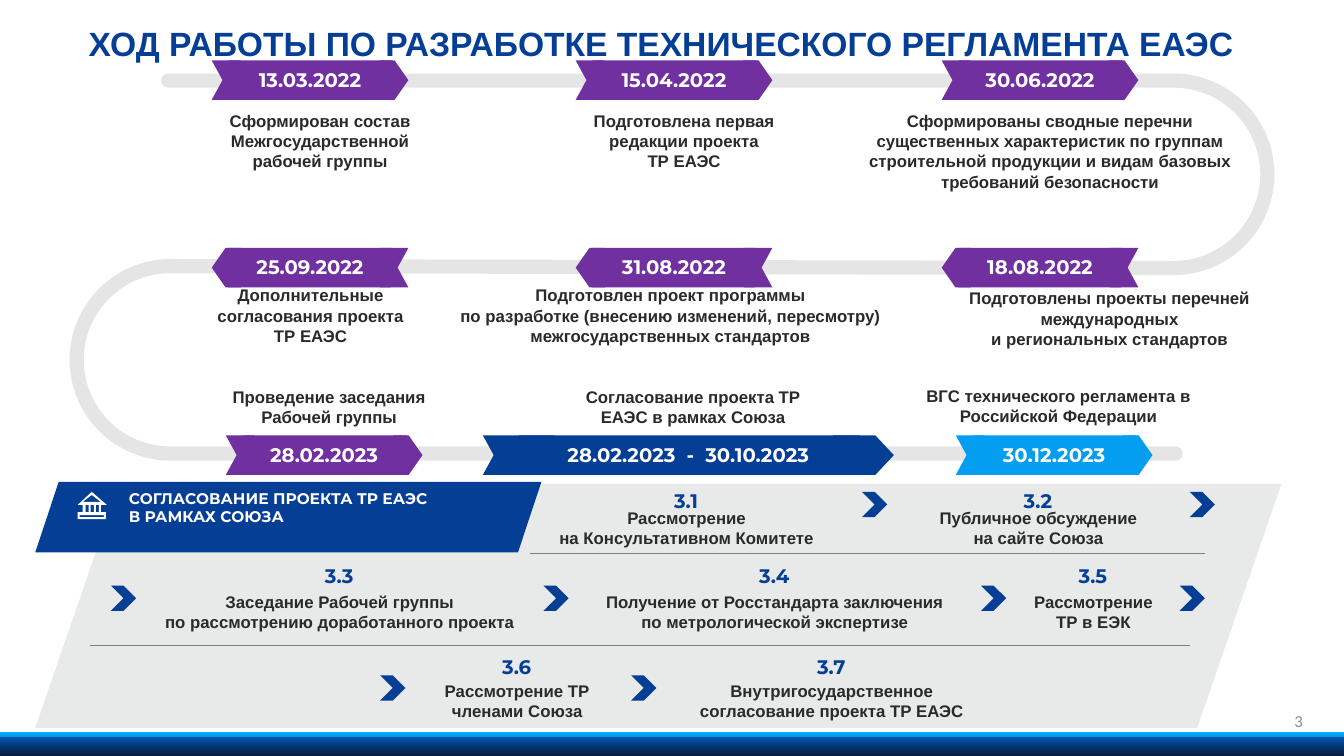
from dataclasses import dataclass
from math import cos, radians, sin

from lxml import etree
from pptx import Presentation
from pptx import util as u
from pptx.dml.color import RGBColor
from pptx.enum import shapes, text
from pptx.oxml.ns import qn

COLORS = {
    "track": "E5E5E5", "purple": "7030A0", "navy": "053E95", "sky": "039EF0",
    "body": "292A2B", "white": "FFFFFF", "panel": "E8E9E9", "rule": "7F7F7F",
    "page": "8C8C8C", "deep": "051A3D", "mid": "0156B0", "bright": "03ACFC",
}
FONTS = {
    "title": {"name": "Arial", "size": u.Pt(24), "bold": True},
    "body": {"name": "Arial", "size": u.Pt(12), "bold": True},
    "label": {"name": "Montserrat", "size": u.Pt(14), "bold": True},
    "heading": {"name": "Montserrat", "size": u.Pt(11), "bold": True},
    "page": {"name": "Calibri", "size": u.Pt(12), "bold": False},
}
LEFT, CENTER, RIGHT = text.PP_ALIGN.LEFT, text.PP_ALIGN.CENTER, text.PP_ALIGN.RIGHT
TOP, MIDDLE = text.MSO_ANCHOR.TOP, text.MSO_ANCHOR.MIDDLE
PRESET = shapes.MSO_SHAPE
BANNER_W, BANNER_H = 1.95, 0.39

Box = tuple[float, float, float, float]
Points = list[tuple[float, float]]


@dataclass
class Milestone:
    date: str
    left: float
    top: float
    note: str
    note_box: Box
    color: str = "purple"
    backward: bool = False
    stretch: float = 1


@dataclass
class Step:
    number: str
    number_top: float
    note: str
    note_box: Box


MILESTONES = [
    Milestone("13.03.2022", 2.1, 0.6, "Сформирован состав Межгосударственной рабочей группы",
              (1.92, 1.05, 2.51, 0.71)),
    Milestone("15.04.2022", 5.71, 0.6, "Подготовлена первая редакции проекта\nТР ЕАЭС",
              (5.53, 1.05, 2.51, 0.71)),
    Milestone("30.06.2022", 9.34, 0.6, "Сформированы сводные перечни\nсущественных характеристик по группам "
              "строительной продукции и видам базовых требований безопасности", (8.26, 1.05, 4.31, 0.91)),
    Milestone("18.08.2022", 9.34, 2.46, "Подготовлены проекты перечней международных\nи региональных стандартов",
              (9.1, 2.81, 3.81, 0.71), backward=True),
    Milestone("31.08.2022", 5.71, 2.46, "Подготовлен проект программы\nпо разработке (внесению изменений, "
              "пересмотру) межгосударственных стандартов", (4.14, 2.78, 5.02, 0.71), backward=True),
    Milestone("25.09.2022", 2.1, 2.46, "Дополнительные согласования проекта\nТР ЕАЭС",
              (1.82, 2.78, 2.52, 0.71), backward=True),
    Milestone("28.02.2023", 2.24, 4.32, "Проведение заседания Рабочей группы", (2.01, 3.79, 2.51, 0.5)),
    Milestone("28.02.2023  -  30.10.2023", 4.79, 4.32, "Согласование проекта ТР ЕАЭС в рамках Союза",
              (5.49, 3.79, 2.77, 0.5), "navy", stretch=2.09),
    Milestone("30.12.2023", 9.48, 4.32, "ВГС технического регламента в Российской Федерации",
              (9.08, 3.78, 2.84, 0.5), "sky"),
]
STEPS = [
    Step("3.1", 4.8, "Рассмотрение\nна Консультативном Комитете", (5.37, 4.99, 2.88, 0.5)),
    Step("3.2", 4.8, "Публичное обсуждение\nна сайте Союза", (9.13, 4.99, 2.34, 0.5)),
    Step("3.3", 5.55, "Заседание Рабочей группы\nпо рассмотрению доработанного проекта", (1.48, 5.82, 3.78, 0.5)),
    Step("3.4", 5.55, "Получение от Росстандарта заключения\nпо метрологической экспертизе",
         (5.77, 5.82, 3.83, 0.5)),
    Step("3.5", 5.55, "Рассмотрение ТР в ЕЭК", (10.11, 5.82, 1.47, 0.5)),
    Step("3.6", 6.45, "Рассмотрение ТР\nчленами Союза", (4.28, 6.7, 1.7, 0.5)),
    Step("3.7", 6.45, "Внутригосударственное согласование проекта ТР ЕАЭС", (6.78, 6.7, 2.94, 0.5)),
]
STEP_ARROWS = {4.88: (8.55, 11.8), 5.81: (1.1, 5.39, 9.73, 11.7), 6.7: (3.77, 6.26)}

prs = Presentation()
prs.slide_width, prs.slide_height = u.Inches(13.33), u.Inches(7.5)
slide = prs.slides.add_slide(prs.slide_layouts[6])


def rgb(color: str) -> RGBColor:
    return RGBColor.from_string(COLORS[color])


def paint(shape, color: str) -> None:
    shape.shadow.inherit = False
    shape.fill.solid()
    shape.fill.fore_color.rgb = rgb(color)
    shape.line.fill.background()


def add_preset(kind, box: Box, color: str, adjust: float | None = None, rotation: float = 0):
    shape = slide.shapes.add_shape(kind, *map(u.Inches, box))
    paint(shape, color)
    if adjust is not None:
        shape.adjustments[0] = adjust
    shape.rotation = rotation
    return shape


def add_text(content: str, box: Box, font: str, color: str, align=CENTER, anchor=TOP) -> None:
    frame = slide.shapes.add_textbox(*map(u.Inches, box)).text_frame
    frame.word_wrap = True
    frame.vertical_anchor = anchor
    frame.text = content
    for paragraph in frame.paragraphs:
        paragraph.alignment = align
        for key, value in FONTS[font].items():
            setattr(paragraph.font, key, value)
        paragraph.font.color.rgb = rgb(color)


def add_outline(contours: list[Points], color: str) -> None:
    # The builder keeps whole numbers only, so points go in as EMU
    first, *others = [[(u.Inches(x), u.Inches(y)) for x, y in contour] for contour in contours]
    builder = slide.shapes.build_freeform(*first[0])
    builder.add_line_segments(first[1:])
    for contour in others:
        builder.move_to(*contour[0])
        builder.add_line_segments(contour[1:])
    paint(builder.convert_to_shape(), color)


def arc(x: float, y: float, radius: float, start: int, end: int) -> Points:
    angles = [radians(start + (end - start) * i / 36) for i in range(37)]
    return [(x + radius * cos(a), y + radius * sin(a)) for a in angles]


def rect_points(left: float, top: float, right: float, bottom: float) -> Points:
    return [(left, top), (right, top), (right, bottom), (left, bottom)]


def add_milestone(stone: Milestone) -> None:
    width = BANNER_W * stone.stretch
    pieces = [(PRESET.CHEVRON, 0, 0.39, 0.274), (PRESET.RECTANGLE, 0.17, 1.62, None),
              (PRESET.PENTAGON, 1.66, 0.29, 0.469)]
    for kind, offset, size, adjust in pieces:
        offset, size = offset * stone.stretch, size * stone.stretch
        if stone.backward:
            offset = width - offset - size
        add_preset(kind, (stone.left + offset, stone.top, size, BANNER_H), stone.color, adjust,
                   180 if stone.backward else 0)
    add_text(stone.date, (stone.left + 0.28, stone.top + 0.02, width - 0.56, 0.34), "label", "white")
    add_text(stone.note, stone.note_box, "body", "body")


def add_step(step: Step) -> None:
    left, _, width, _ = step.note_box
    add_text(step.note, step.note_box, "body", "body")
    add_text(step.number, (left + width / 2 - 0.31, step.number_top, 0.61, 0.34), "label", "navy")


def add_rule(left: float, right: float, y: float) -> None:
    rule = slide.shapes.add_connector(shapes.MSO_CONNECTOR.STRAIGHT, *map(u.Inches, (left, y, right, y)))
    rule.line.color.rgb = rgb("rule")
    rule.line.width = u.Pt(0.5)
    etree.SubElement(rule._element.spPr, qn("a:effectLst"))


# Footer bars
for bar_top, lower, upper in [(7.26, "mid", "bright"), (7.31, "deep", "mid")]:
    bar = add_preset(PRESET.RECTANGLE, (0, bar_top, 13.33, 0.19), lower)
    bar.fill.gradient()
    bar.fill.gradient_angle = 90
    for stop, stop_color in zip(bar.fill.gradient_stops, (lower, upper)):
        stop.color.rgb = rgb(stop_color)

# Title
add_text("ХОД РАБОТЫ ПО РАЗРАБОТКЕ ТЕХНИЧЕСКОГО РЕГЛАМЕНТА ЕАЭС", (0.78, 0.16, 12.55, 0.54),
         "title", "navy", LEFT, MIDDLE)

# Winding track: rounded ends and two bends
CAP, INNER, OUTER = 0.07, 0.86, 1.0
add_outline([
    arc(1.67, 0.8, CAP, 90, 270) + arc(11.64, 1.73, OUTER, -90, 90)
    + arc(1.69, 3.57, INNER, -90, -270) + arc(11.66, 4.5, CAP, -90, 90)
    + arc(1.69, 3.57, OUTER, 90, 270) + arc(11.64, 1.73, INNER, 90, -90)
], "track")

# Milestones
for milestone in MILESTONES:
    add_milestone(milestone)

# Approval panel and its heading
add_text("3", (10.02, 6.95, 3, 0.4), "page", "page", RIGHT, MIDDLE)
add_preset(PRESET.PARALLELOGRAM, (0.35, 4.8, 12.36, 2.42), "panel", 0.345)
add_preset(PRESET.PARALLELOGRAM, (0.35, 4.78, 5.02, 0.7), "navy", 0.332)
add_text("СОГЛАСОВАНИЕ ПРОЕКТА ТР ЕАЭС\nВ РАМКАХ СОЮЗА", (1.18, 4.8, 4.03, 0.47), "heading", "white", LEFT)

# Building icon: silhouette with roof, column gaps and base cut out
silhouette = [(0.91, 4.88), (1.06, 5.01), (1, 5.01), (1, 5.08), (1.05, 5.08), (1.05, 5.15),
              (0.77, 5.15), (0.77, 5.08), (0.82, 5.08), (0.82, 5.01), (0.77, 5.01)]
roof = [(0.91, 4.91), (1, 4.98), (0.82, 4.98)]
gaps = [rect_points(x, 5.01, x + 0.03, 5.08) for x in (0.85, 0.9, 0.95)]
add_outline([silhouette, roof, *gaps, rect_points(0.79, 5.11, 1.03, 5.13)], "white")

# Approval steps
for approval_step in STEPS:
    add_step(approval_step)
for arrow_top, arrow_lefts in STEP_ARROWS.items():
    for arrow_left in arrow_lefts:
        add_preset(PRESET.CHEVRON, (arrow_left, arrow_top, 0.25, 0.25), "navy")
add_rule(5.26, 11.95, 5.49)
add_rule(0.89, 11.8, 6.4)

prs.save("out.pptx")
